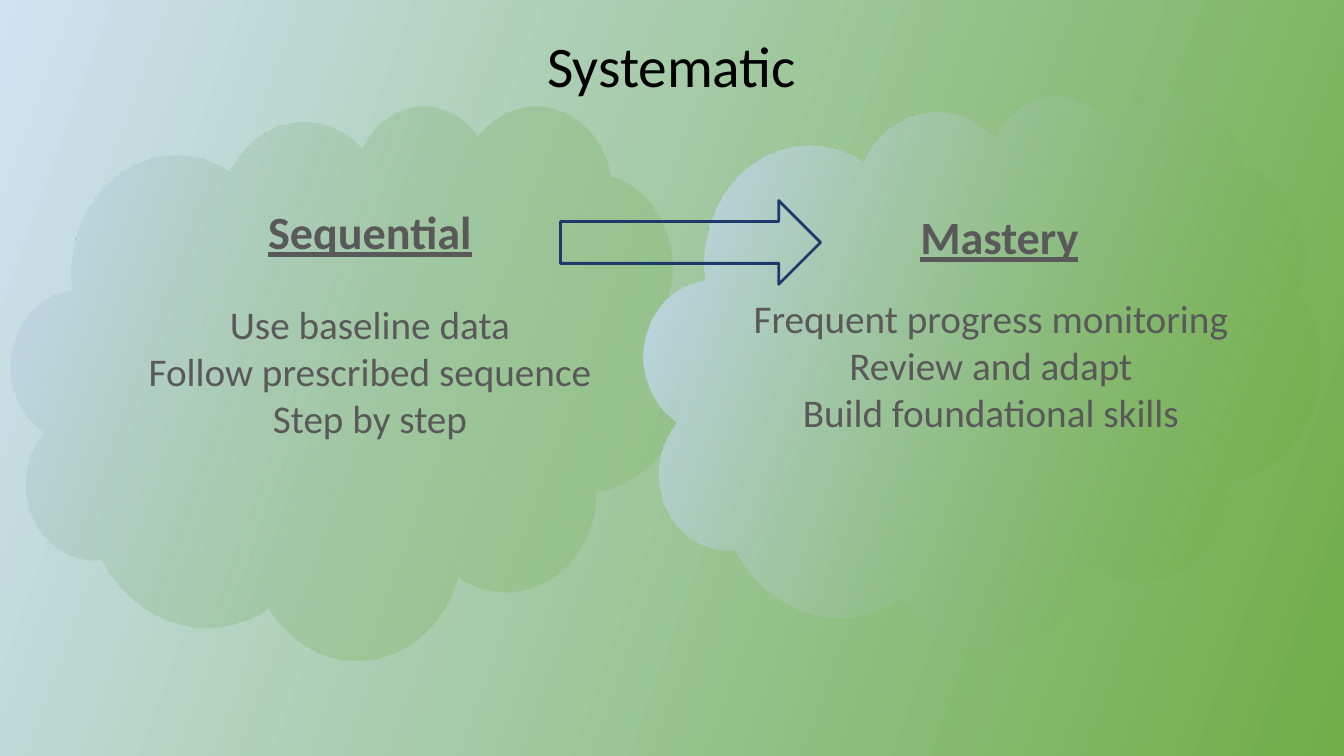
from lxml import etree
from pptx import Presentation
from pptx.dml.color import RGBColor
from pptx.enum import shapes, text
from pptx.oxml.ns import qn
from pptx.util import Pt

BLACK = RGBColor(0x00, 0x00, 0x00)
GRAY = RGBColor(0x59, 0x59, 0x59)
NAVY = RGBColor(0x1D, 0x3A, 0x6B)
GREEN = RGBColor(0x70, 0xAD, 0x47)
SKY = RGBColor(0xCF, 0xE2, 0xF3)
BLUE = RGBColor(0xC9, 0xDA, 0xF8)
PALE_BLUE = RGBColor(0xD9, 0xE4, 0xF8)

# Gradient stops: position in percent, colour, opacity in percent
PAGE_STOPS = [(0, GREEN, 20), (100, SKY, 100)]
CLOUD_STOPS = [(0, GREEN, 20), (16, GREEN, 20), (100, BLUE, 100), (100, PALE_BLUE, 100)]
CLOUD_SIZE = (482.4, 395.3)


def set_gradient(fill, element, stops):
    fill.gradient()
    fill.gradient_angle = 160
    stop_list = element.find(".//" + qn("a:gsLst"))
    for stop in list(stop_list):
        stop_list.remove(stop)
    for position, colour, opacity in stops:
        stop = etree.SubElement(stop_list, qn("a:gs"), pos=str(position * 1000))
        tint = etree.SubElement(stop, qn("a:srgbClr"), val=str(colour))
        if opacity < 100:
            etree.SubElement(tint, qn("a:alpha"), val=str(opacity * 1000))


def add_shape(page, kind, left, top, width, height):
    shape = page.shapes.add_shape(kind, Pt(left), Pt(top), Pt(width), Pt(height))
    shape.shadow.inherit = False
    return shape


def add_text(page, left, top, width, height, lines, size, colour):
    box = page.shapes.add_textbox(Pt(left), Pt(top), Pt(width), Pt(height))
    frame = box.text_frame
    frame.word_wrap = True
    frame.margin_left = frame.margin_right = Pt(7.2)
    frame.margin_top = frame.margin_bottom = Pt(7.2)
    frame.text = "\n".join(lines)
    for para in frame.paragraphs:
        para.alignment = text.PP_ALIGN.CENTER
        for span in para.runs:
            span.font.name = "Calibri"
            span.font.size = Pt(size)
            span.font.color.rgb = colour
    return frame


def style_heading(para):
    for span in para.runs:
        span.font.size = Pt(33)
        span.font.bold = True
        span.font.underline = True


def add_title(page, left, top, width, height):
    frame = add_text(page, left, top, width, height, ["Systematic"], 41, BLACK)
    frame.paragraphs[0].line_spacing = 0.9


def add_cloud(page, left, top):
    cloud = add_shape(page, shapes.MSO_SHAPE.CLOUD, left, top, *CLOUD_SIZE)
    set_gradient(cloud.fill, cloud.element, CLOUD_STOPS)
    cloud.line.fill.background()


def add_sequential(page, left, top):
    # Heading and list share one box
    add_cloud(page, left, top)
    lines = ["Sequential", "Use baseline data", "Follow prescribed sequence", "Step by step"]
    frame = add_text(page, left + 82.8, top + 63.3, 347, 228.2, lines, 28, GRAY)
    style_heading(frame.paragraphs[0])
    frame.paragraphs[1].space_before = Pt(29.3)


def add_mastery(page, left, top):
    # Heading and list stand in separate boxes
    add_cloud(page, left, top)
    heading = add_text(page, left + 87.1, top + 74.1, 333.4, 54.7, ["Mastery"], 33, GRAY)
    style_heading(heading.paragraphs[0])
    lines = ["Frequent progress monitoring", "Review and adapt", "Build foundational skills"]
    add_text(page, left + 69.8, top + 135.3, 355.7, 169.2, lines, 28, GRAY)


def add_arrow(page, left, top, width, height):
    arrow = add_shape(page, shapes.MSO_SHAPE.RIGHT_ARROW, left, top, width, height)
    arrow.fill.background()
    arrow.line.color.rgb = NAVY
    arrow.line.width = Pt(2)


def main():
    deck = Presentation()
    deck.slide_width, deck.slide_height = Pt(960), Pt(540)
    page = deck.slides.add_slide(deck.slide_layouts[6])
    set_gradient(page.background.fill, page.element, PAGE_STOPS)

    add_sequential(page, 7.9, 74.9)
    add_title(page, 160.6, 20.2, 638.6, 85)
    add_mastery(page, 460.1, 67.7)
    add_arrow(page, 400.3, 143.3, 185.8, 59.8)
    deck.save("out.pptx")


if __name__ == "__main__":
    main()
